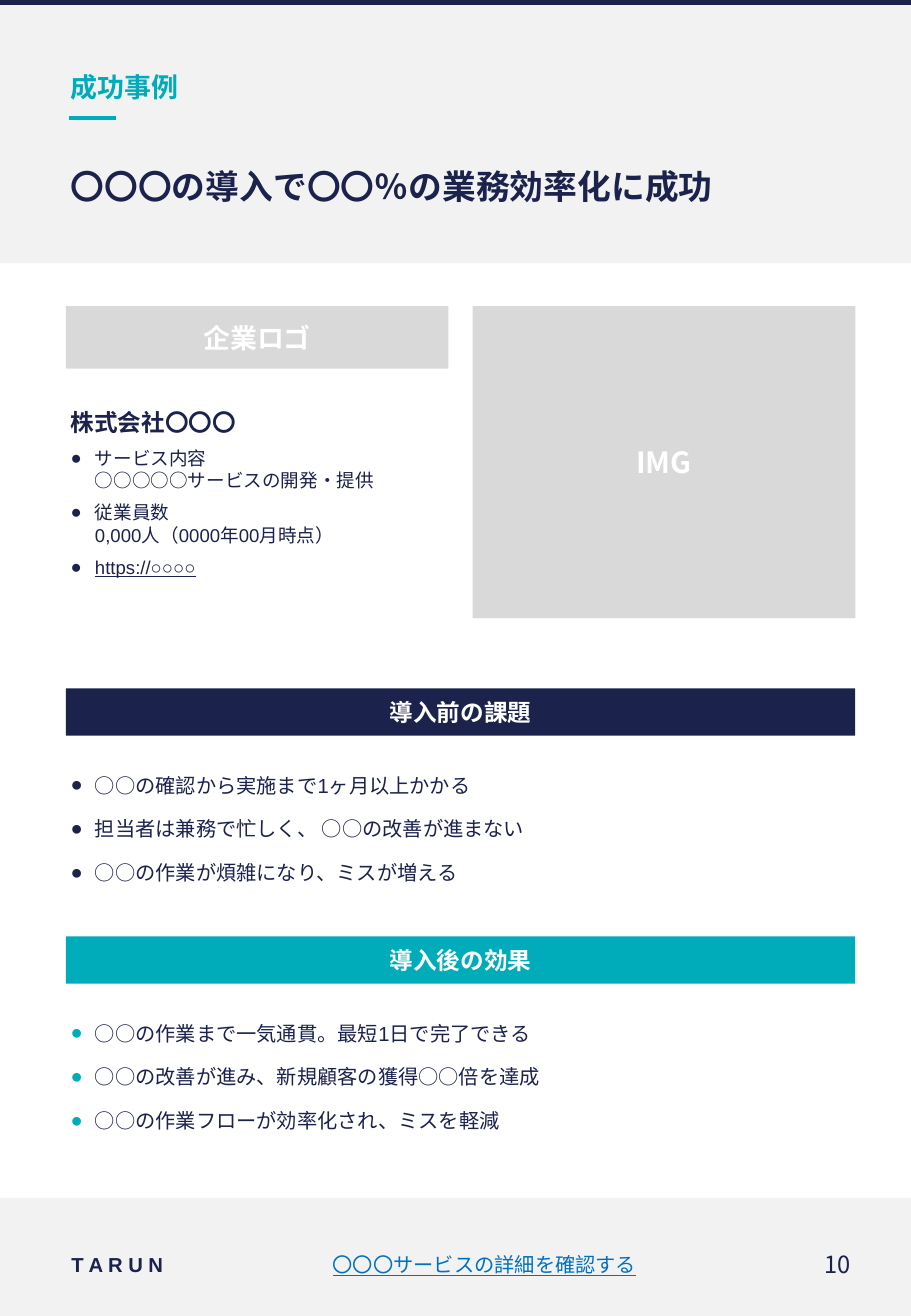
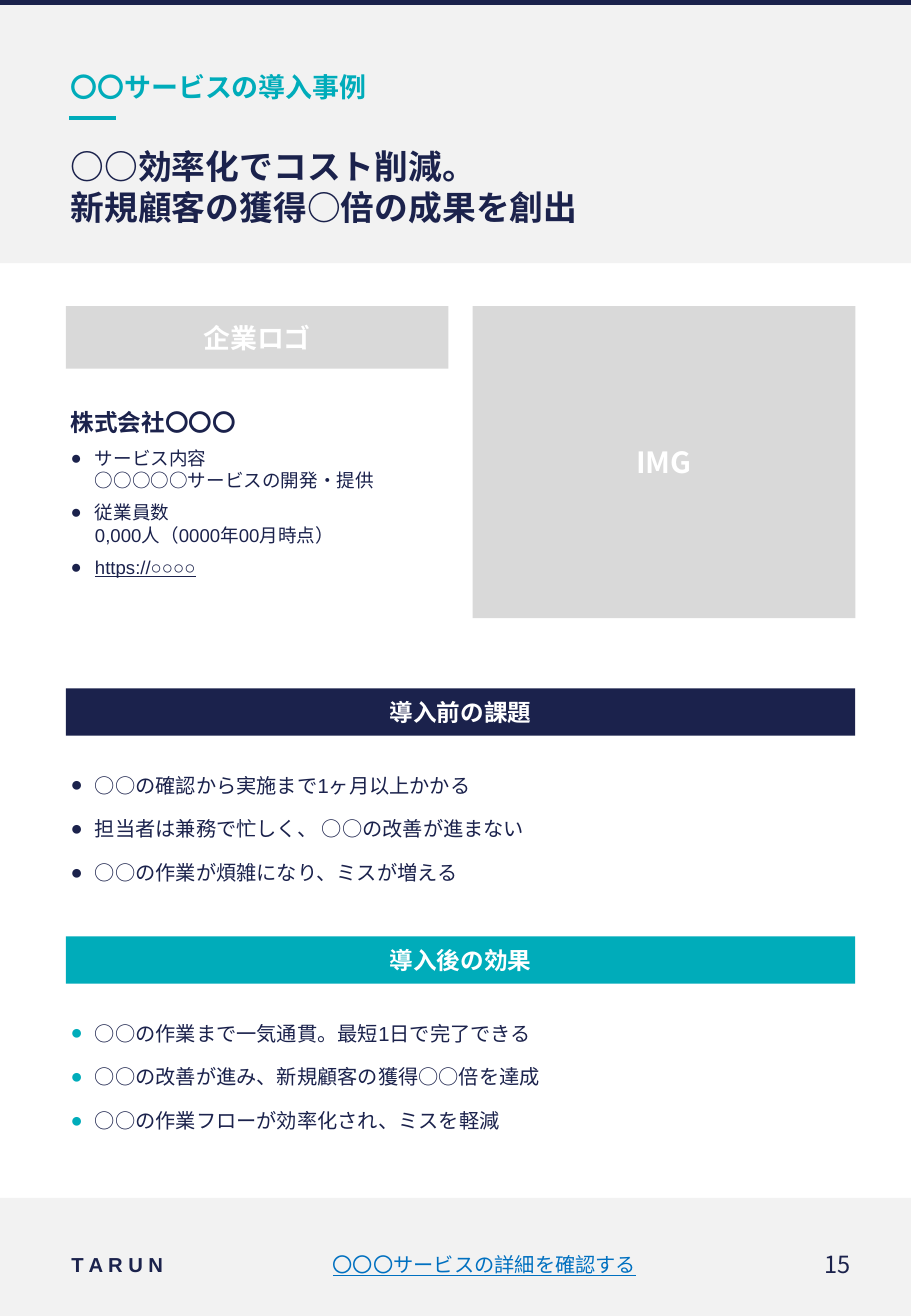
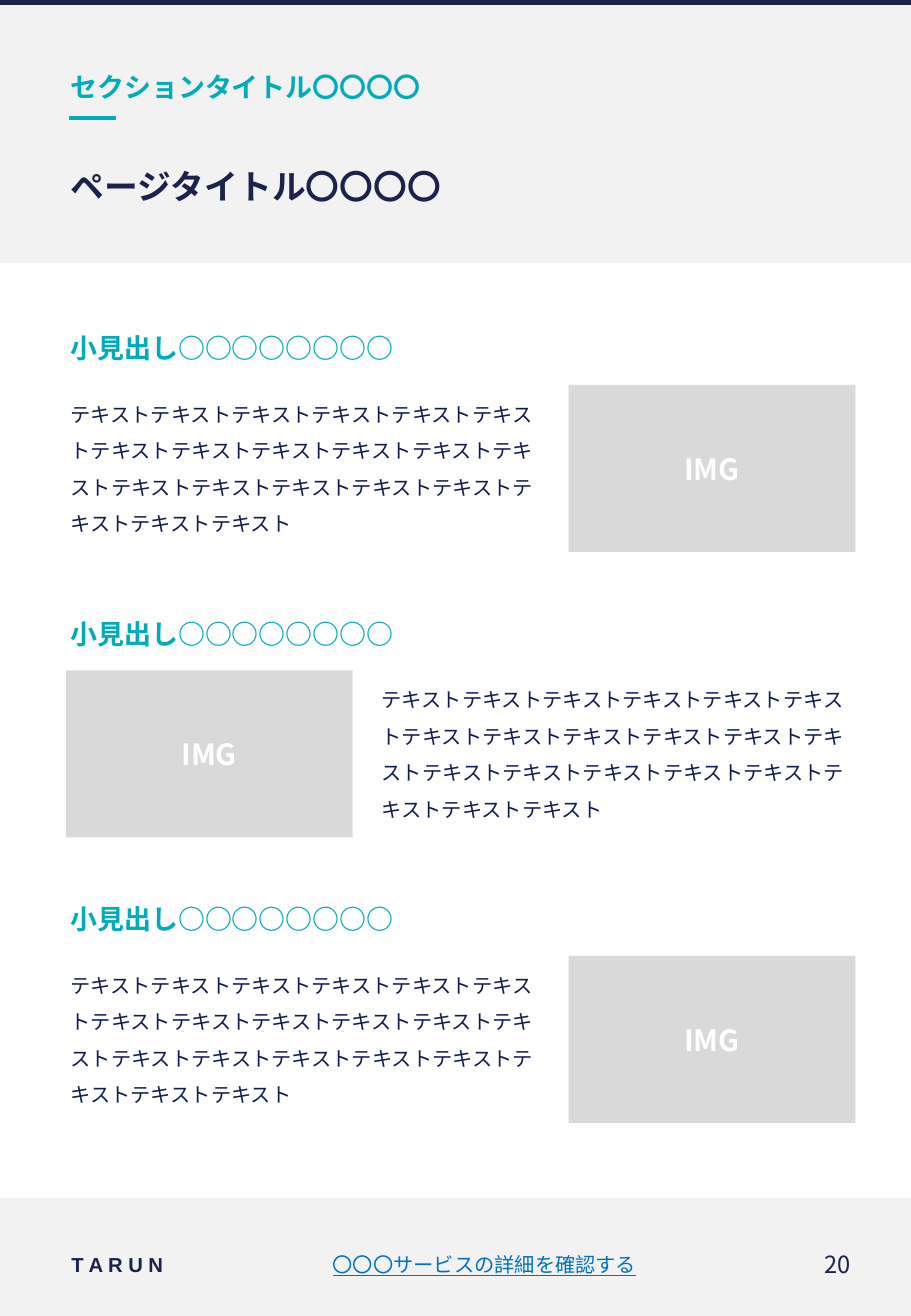
from lxml import etree
from pptx import Presentation
from pptx.dml.color import RGBColor
from pptx.enum.shapes import MSO_CONNECTOR, MSO_SHAPE
from pptx.enum.text import MSO_ANCHOR, PP_ALIGN
from pptx.oxml.ns import qn
from pptx.util import Pt

RECT = MSO_SHAPE.RECTANGLE
STRAIGHT = MSO_CONNECTOR.STRAIGHT
TOP, MIDDLE = MSO_ANCHOR.TOP, MSO_ANCHOR.MIDDLE
LEFT, CENTER, RIGHT = PP_ALIGN.LEFT, PP_ALIGN.CENTER, PP_ALIGN.RIGHT

NAVY = RGBColor(0x1B, 0x22, 0x4C)
BODY_NAVY = RGBColor(0x0F, 0x1C, 0x50)
TEAL = RGBColor(0x00, 0xAC, 0xBA)
LINK_BLUE = RGBColor(0x00, 0x70, 0xC0)
PALE_GRAY = RGBColor(0xF2, 0xF2, 0xF2)
MID_GRAY = RGBColor(0xD9, 0xD9, 0xD9)
WHITE = RGBColor(0xFF, 0xFF, 0xFF)

LATIN_FONT = "Arial"
CJK_FONT = "Noto Sans CJK JP"

# Page grid, in points
PAGE_W, PAGE_H = 540, 780
MARGIN = 39
CONTENT_W = 468
GAP = 14.4
HALF_W = (CONTENT_W - GAP) / 2
INSET = 2.9
BULLET_INDENT = 14.4
SINGLE = 1.2  # line pitch relative to the text size
WIDE = 1.8

COMPANY_FACTS = [
    "サービス内容\n○○○○○サービスの開発・提供",
    "従業員数\n0,000人（0000年00月時点）",
]
ISSUES = [
    "○○の確認から実施まで1ヶ月以上かかる",
    "担当者は兼務で忙しく、 ○○の改善が進まない",
    "○○の作業が煩雑になり、ミスが増える",
]
EFFECTS = [
    "○○の作業まで一気通貫。最短1日で完了できる",
    "○○の改善が進み、新規顧客の獲得○○倍を達成",
    "○○の作業フローが効率化され、ミスを軽減",
]


def add_run(paragraph, text, size, color, bold=False, underline=False, font=LATIN_FONT):
    run = paragraph.add_run()
    run.text = text
    run.font.size = Pt(size)
    run.font.bold = bold
    run.font.underline = underline
    run.font.color.rgb = color
    run.font.name = font
    east_asian = etree.SubElement(run.font._element, qn("a:ea"))
    east_asian.set("typeface", CJK_FONT)


def write(paragraph, text, size, color, align=LEFT, pitch=None, after=0, **style):
    """Fill a paragraph; a newline in the text becomes a line break."""
    paragraph.alignment = align
    paragraph.space_after = Pt(after)
    if pitch:
        paragraph.line_spacing = Pt(size * pitch)
    for index, line in enumerate(text.split("\n")):
        if index:
            paragraph.add_line_break()
        add_run(paragraph, line, size, color, **style)


def add_bullet(paragraph, color):
    props = paragraph._p.get_or_add_pPr()
    props.set("marL", str(Pt(BULLET_INDENT)))
    props.set("indent", str(-Pt(BULLET_INDENT)))
    bullet_color = etree.SubElement(props, qn("a:buClr"))
    etree.SubElement(bullet_color, qn("a:srgbClr")).set("val", str(color))
    etree.SubElement(props, qn("a:buFont")).set("typeface", LATIN_FONT)
    etree.SubElement(props, qn("a:buChar")).set("char", "●")


def set_frame(frame, anchor):
    frame.word_wrap = True
    frame.vertical_anchor = anchor
    frame.margin_left = frame.margin_right = Pt(INSET)
    frame.margin_top = frame.margin_bottom = Pt(INSET)


def text_area(slide, x, y, w, h, anchor=TOP):
    frame = slide.shapes.add_textbox(Pt(x), Pt(y), Pt(w), Pt(h)).text_frame
    set_frame(frame, anchor)
    return frame


def label(slide, x, y, w, h, text, size, color, **style):
    frame = text_area(slide, x, y, w, h, MIDDLE)
    write(frame.paragraphs[0], text, size, color, **style)


def block(slide, x, y, w, h, fill, text="", size=0):
    """Flat rectangle with an optional centred white caption."""
    rect = slide.shapes.add_shape(RECT, Pt(x), Pt(y), Pt(w), Pt(h))
    rect.shadow.inherit = False
    rect.fill.solid()
    rect.fill.fore_color.rgb = fill
    rect.line.fill.background()
    if text:
        set_frame(rect.text_frame, MIDDLE)
        write(rect.text_frame.paragraphs[0], text, size, WHITE,
              align=CENTER, bold=True, font=CJK_FONT)


def image_area(slide, x, y, w, h):
    block(slide, x, y, w, h, MID_GRAY, "IMG", 17.3)


def new_page(prs, section, title, number):
    """Page with the shared bands, titles and footer."""
    slide = prs.slides.add_slide(prs.slide_layouts[6])

    # Header
    block(slide, 0, 0, PAGE_W, 156, PALE_GRAY)
    accent = slide.shapes.add_connector(STRAIGHT, Pt(41), Pt(70), Pt(69), Pt(70))
    accent.line.color.rgb = TEAL
    accent.line.width = Pt(2.5)
    etree.SubElement(accent._element.spPr, qn("a:effectLst"))
    block(slide, 0, 0, PAGE_W, 3, NAVY)
    label(slide, MARGIN, 37.5, CONTENT_W, 28, section, 16, TEAL, bold=True)
    label(slide, MARGIN, 82, CONTENT_W, 57, title, 20, NAVY, bold=True, pitch=SINGLE)

    # Footer
    footer_y, footer_h = 738, 22.5
    block(slide, 0, 710, PAGE_W, PAGE_H - 710, PALE_GRAY)
    label(slide, 39.5, footer_y, 113, footer_h, "T A R U N", 12, NAVY, bold=True)
    label(slide, 152.5, footer_y, 269.5, footer_h, "〇〇〇サービスの詳細を確認する",
          12, LINK_BLUE, align=CENTER, underline=True)
    label(slide, 422, footer_y, 85, footer_h, str(number), 14, NAVY,
          align=RIGHT, font=CJK_FONT)
    return slide


def banner_list(slide, y, heading, items, color):
    """Full-width banner with a bullet list below it."""
    block(slide, MARGIN, y, CONTENT_W, 28, color, heading, 14)
    frame = text_area(slide, MARGIN, y + 40, CONTENT_W, 78)
    for index, item in enumerate(items):
        paragraph = frame.add_paragraph() if index else frame.paragraphs[0]
        write(paragraph, item, 12, NAVY, pitch=WIDE, after=4.3)
        add_bullet(paragraph, color)


def company_profile(slide, y):
    frame = text_area(slide, MARGIN, y, HALF_W, 127.5)
    write(frame.paragraphs[0], "株式会社〇〇〇", 14, NAVY, bold=True, pitch=SINGLE, after=6)
    facts = [(fact, False) for fact in COMPANY_FACTS] + [("https://○○○○", True)]
    for fact, underline in facts:
        paragraph = frame.add_paragraph()
        write(paragraph, fact, 11, NAVY, pitch=SINGLE, after=6, underline=underline)
        add_bullet(paragraph, NAVY)


def case_page(prs, section, title, number):
    slide = new_page(prs, section, title, number)
    top = 181.5
    block(slide, MARGIN, top, HALF_W, 37, MID_GRAY, "企業ロゴ", 16)
    image_area(slide, MARGIN + HALF_W + GAP, top, HALF_W, 185)
    company_profile(slide, 239)
    banner_list(slide, 408, "導入前の課題", ISSUES, NAVY)
    banner_list(slide, 555, "導入後の効果", EFFECTS, TEAL)


def article_page(prs, section, title, number):
    slide = new_page(prs, section, title, number)
    image_w, row_h = 170, 99
    text_w = CONTENT_W - GAP - image_w
    for row in range(3):
        y = 228.2 + row * 169.2
        # Image side alternates from row to row
        if row % 2:
            image_x, text_x = MARGIN, MARGIN + image_w + GAP
        else:
            image_x, text_x = MARGIN + text_w + GAP, MARGIN
        label(slide, MARGIN, y - 36, CONTENT_W, 28, "小見出し○○○○○○○○", 16, TEAL, bold=True)
        body = text_area(slide, text_x, y, text_w, row_h)
        write(body.paragraphs[0], "テキスト" * 20, 12, BODY_NAVY, pitch=WIDE, after=4.3)
        image_area(slide, image_x, y, image_w, row_h)


def main():
    prs = Presentation()
    prs.slide_width, prs.slide_height = Pt(PAGE_W), Pt(PAGE_H)
    case_page(prs, "成功事例", "〇〇〇の導入で〇〇％の業務効率化に成功", 10)
    case_page(prs, "〇〇サービスの導入事例",
              "○○効率化でコスト削減。\n新規顧客の獲得○倍の成果を創出", 15)
    article_page(prs, "セクションタイトル〇〇〇〇", "ページタイトル〇〇〇〇", 20)
    prs.save("out.pptx")


if __name__ == "__main__":
    main()
